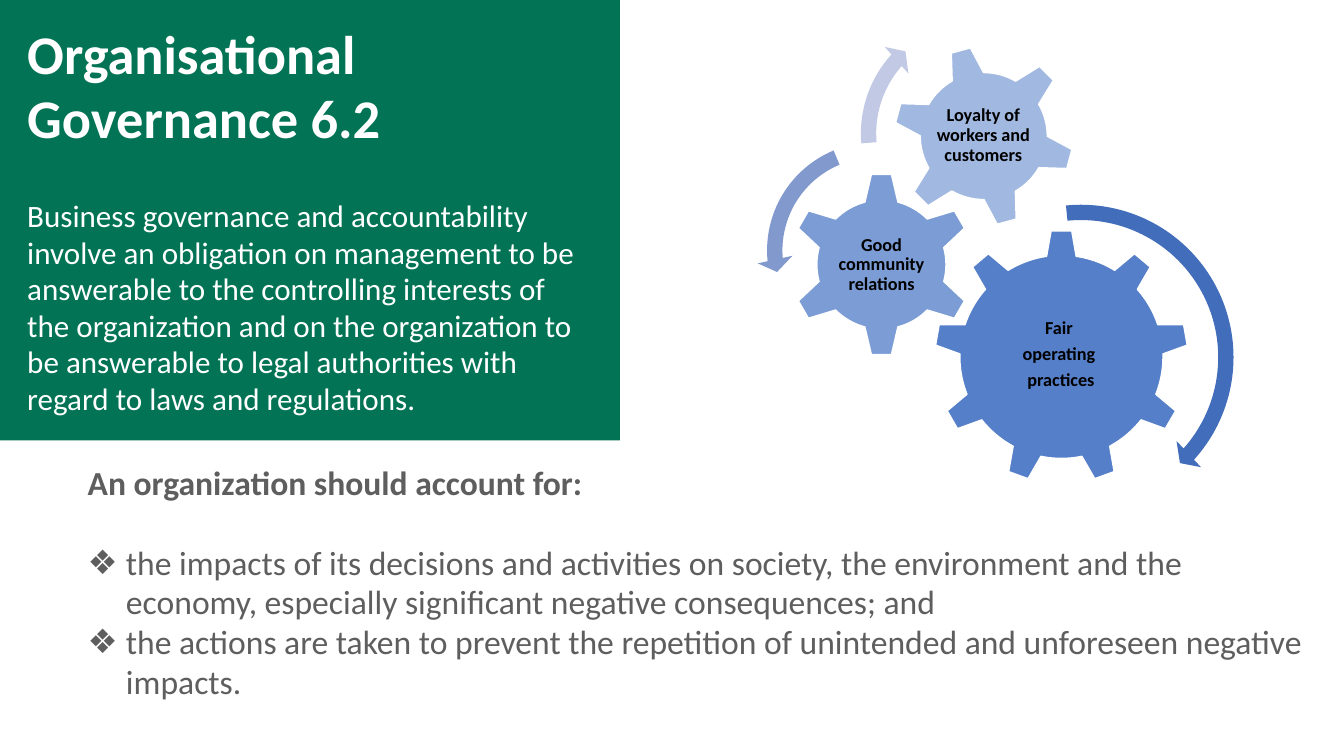
import pptx
import pptx.util
import pptx.dml.color
import pptx.enum.shapes
import pptx.enum.text
import pptx.oxml.ns
import lxml.etree

Pt = pptx.util.Pt
KIND = pptx.enum.shapes.MSO_SHAPE
ALIGN = pptx.enum.text.PP_ALIGN
ANCHOR = pptx.enum.text.MSO_ANCHOR
FIT = pptx.enum.text.MSO_AUTO_SIZE
qn = pptx.oxml.ns.qn

HUE = {
    "green": "027354", "white": "FFFFFF", "grey": "5E5E5E", "black": "000000",
    "gear": "4472C4", "deep": "416DBB", "mid": "8299CE", "pale": "C1C9E4",
}

# kind, box in the diagram, opacity, turn, text box, lines
GEARS = [
    (KIND.GEAR_9, (126.72, 161.28, 181.44, 181.44), 90, 0,
     (162.72, 203.76, 108.72, 93.6), ["Fair ", "operating ", "practices"]),
    (KIND.GEAR_6, (23.04, 120.24, 131.76, 131.76), 70, 0,
     (56.16, 154.08, 65.52, 64.8), ["Good community relations"]),
    (KIND.GEAR_6, (97.2, 29.52, 129.6, 129.6), 50, 345,
     (125.28, 57.6, 72.72, 72.72), ["Loyalty of workers and customers"]),
]
ARROWS = [
    (KIND.CIRCULAR_ARROW, (115.2, 136.08, 232.56, 232.56), "deep",
     (0.047, 2.99, 25.162, 158.612, 0.055)),
    (KIND.LEFT_CIRCULAR_ARROW, (0, 91.44, 169.2, 169.2), "mid",
     (0.065, 4.3, 104.891, 148.378, 0.075)),
    (KIND.CIRCULAR_ARROW, (66.96, 1.44, 182.16, 182.16), "pale",
     (0.06, 3.941, 133.138, 105.082, 0.07)),
]


def tint(name):
    return pptx.dml.color.RGBColor.from_string(HUE[name])


def place(shape, box):
    shape.left, shape.top, shape.width, shape.height = map(Pt, box)


def write(para, text, size, hue, bold=False):
    para.space_before = Pt(0)
    para.space_after = Pt(0)
    run = para.add_run()
    run.text = text
    run.font.name = "Calibri"
    run.font.size = Pt(size)
    run.font.bold = bold
    run.font.color.rgb = tint(hue)


def mark(para, char=None, indent=0):
    """Set the bullet and hanging indent; no char means no bullet."""
    props = para._p.get_or_add_pPr()
    props.set("marL", str(Pt(indent)))
    props.set("indent", str(-Pt(indent)))
    if char:
        lxml.etree.SubElement(props, qn("a:buChar")).set("char", char)
    else:
        lxml.etree.SubElement(props, qn("a:buNone"))


def draw(slide, kind, box, hue):
    shape = slide.shapes.add_shape(kind, *map(Pt, box))
    shape.shadow.inherit = False
    shape.fill.solid()
    shape.fill.fore_color.rgb = tint(hue)
    shape.line.fill.background()
    return shape


def open_frame(holder, box):
    """Place a placeholder and return its top-anchored text frame."""
    place(holder, box)
    frame = holder.text_frame
    frame.word_wrap = True
    frame.auto_size = FIT.NONE
    frame.vertical_anchor = ANCHOR.TOP
    return frame


def add_panel(slide, title, body, box):
    left, top, width, height = box
    panel = draw(slide, KIND.RECTANGLE, box, "green")
    slide.shapes._spTree.insert(2, panel._element)

    inner = left + 12.24
    span = width - 37.44
    para = open_frame(title, (inner, top + 12.96, span, 105)).paragraphs[0]
    para.alignment = ALIGN.LEFT
    para.line_spacing = 0.98
    write(para, "Organisational Governance 6.2", 38.9, "white", True)

    para = open_frame(body, (inner, top + 138, span, height - 143)).paragraphs[0]
    mark(para)
    para.line_spacing = 0.98
    write(para, "Business governance and accountability involve an obligation "
          "on management to be answerable to the controlling interests of the "
          "organization and on the organization to be answerable to legal "
          "authorities with regard to laws and regulations.", 22.2, "white")


def add_duties(body, box):
    frame = open_frame(body, box)
    head = frame.paragraphs[0]
    mark(head)
    head.line_spacing = 0.98
    write(head, "An organization should account for:", 24, "grey", True)
    head.space_after = Pt(29)
    for text in (
        "the impacts of its decisions and activities on society, the "
        "environment and the economy, especially significant negative "
        "consequences; and",
        "the actions are taken to prevent the repetition of unintended and "
        "unforeseen negative impacts.",
    ):
        para = frame.add_paragraph()
        mark(para, "❖", 27.36)
        para.line_spacing = 0.98
        write(para, text, 24, "grey")


def add_label(slide, box, lines):
    frame = slide.shapes.add_textbox(*map(Pt, box)).text_frame
    frame.word_wrap = True
    frame.vertical_anchor = ANCHOR.MIDDLE
    frame.margin_left = frame.margin_right = Pt(1.3)
    frame.margin_top = frame.margin_bottom = Pt(1.3)
    for i, line in enumerate(lines):
        para = frame.add_paragraph() if i else frame.paragraphs[0]
        para.alignment = ALIGN.CENTER
        para.line_spacing = 0.9
        write(para, line, 13, "black", True)
        para.space_after = Pt(4.55)


def add_gears(slide, left, top):
    def shift(box):
        return (left + box[0], top + box[1], *box[2:])

    for kind, box, alpha, turn, area, lines in GEARS:
        gear = draw(slide, kind, shift(box), "gear")
        color = next(gear._element.spPr.iter(qn("a:srgbClr")))
        lxml.etree.SubElement(color, qn("a:alpha")).set("val", str(alpha * 1000))
        gear.line.color.rgb = tint("white")
        gear.line.width = Pt(1)
        gear.rotation = turn
        add_label(slide, shift(area), lines)
    for kind, box, hue, bends in ARROWS:
        arrow = draw(slide, kind, shift(box), hue)
        for i, bend in enumerate(bends):
            arrow.adjustments[i] = bend


def main():
    deck = pptx.Presentation()
    deck.slide_width, deck.slide_height = Pt(960), Pt(540)
    slide = deck.slides.add_slide(deck.slide_layouts[3])
    title, intro, duties = slide.placeholders
    add_panel(slide, title, intro, (0, 0, 442.8, 314.64))
    add_duties(duties, (55.44, 327.6, 892.8, 182))
    add_gears(slide, 540.72, 2.88)
    deck.save("out.pptx")


if __name__ == "__main__":
    main()
